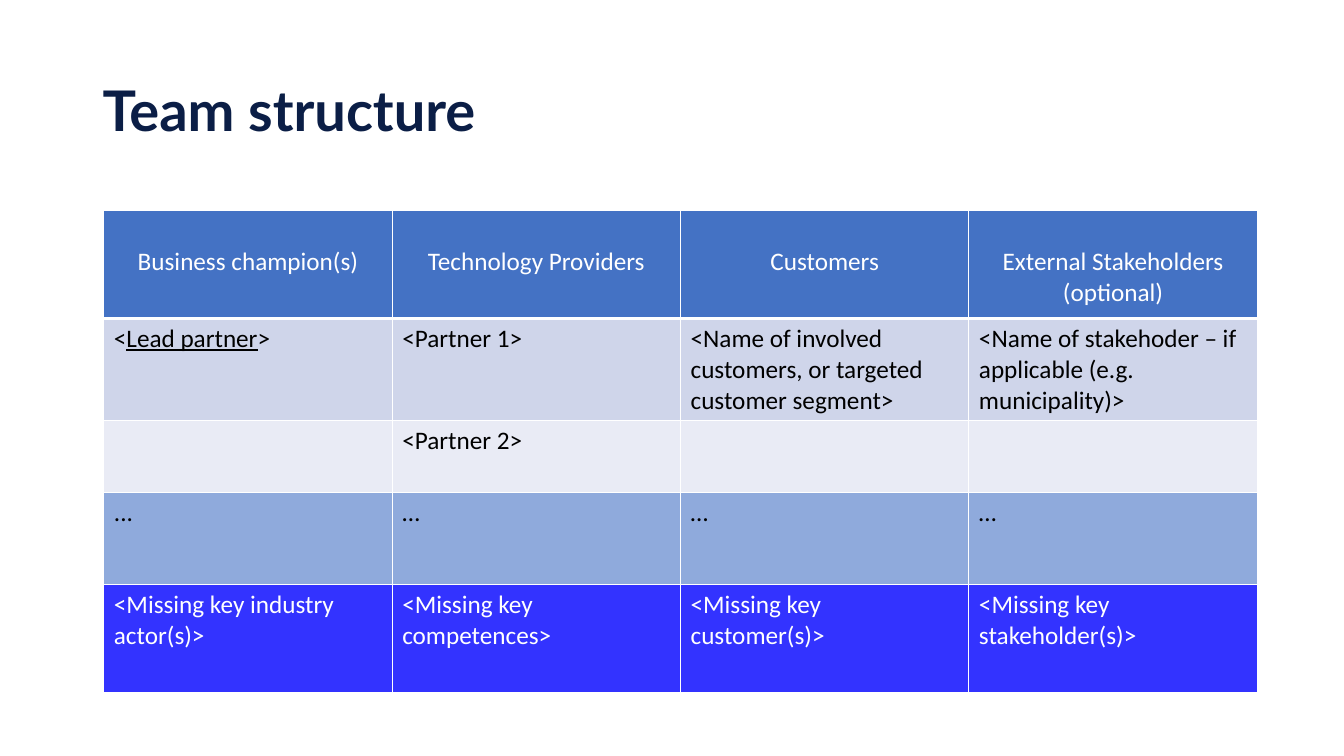
import lxml.etree
import pptx
import pptx.dml.color
import pptx.enum.text
import pptx.oxml.ns
import pptx.util

SLIDE_WIDTH, SLIDE_HEIGHT = 13.33, 7.5
WHITE, BLACK, NAVY = "FFFFFF", "000000", "0B1E46"
COLUMN_WIDTH = 2.86
HEADER_DROP = 0.36

# Each row: height, fill, text colour, one text per column
TEAM_ROWS = [
    (1.07, "4472C4", WHITE, ["Business champion(s)", "Technology Providers", "Customers",
                             "External Stakeholders (optional)"]),
    (1.01, "CFD5EA", BLACK, [["<", "Lead partner", ">"], "<Partner 1>",
                             "<Name of involved customers, or targeted customer segment>",
                             "<Name of stakehoder – if applicable (e.g. municipality)>"]),
    (0.72, "E9EBF5", BLACK, ["", "<Partner 2>", "", ""]),
    (0.91, "8FAADC", BLACK, ["...", "…", "…", "…"]),
    (1.07, "3333FF", WHITE, ["<Missing key industry actor(s)>", "<Missing key competences>",
                             "<Missing key customer(s)>", "<Missing key stakeholder(s)>"]),
]


def rgb(hex_string):
    return pptx.dml.color.RGBColor.from_string(hex_string)


def write(frame, text, size=18, font="Calibri", color=BLACK, bold=False,
          align=pptx.enum.text.PP_ALIGN.LEFT, line_spacing=1.0):
    """Fill a frame; in a list of parts every second part is underlined."""
    frame.word_wrap = True
    paragraph = frame.paragraphs[0]
    paragraph.alignment = align
    paragraph.line_spacing = line_spacing
    parts = [text] if isinstance(text, str) else text
    for index, part in enumerate(parts):
        run = paragraph.add_run()
        run.text = part
        run.font.size = pptx.util.Pt(size)
        run.font.name = font
        run.font.bold = bold
        run.font.color.rgb = rgb(color)
        if index % 2:
            run.font.underline = True


def add_borders(cell, color, bottom=1):
    properties = cell._tc.get_or_add_tcPr()
    qn = pptx.oxml.ns.qn
    for side, points in (("L", 1), ("R", 1), ("T", 1), ("B", bottom)):
        line = lxml.etree.SubElement(properties, qn(f"a:ln{side}"), w=str(pptx.util.Pt(points)))
        fill = lxml.etree.SubElement(line, qn("a:solidFill"))
        lxml.etree.SubElement(fill, qn("a:srgbClr"), val=color)


def add_title(slide, text):
    title = slide.shapes.add_textbox(*map(pptx.util.Inches, (0.92, 0.4, 9.16, 1.45)))
    title.text_frame.vertical_anchor = pptx.enum.text.MSO_ANCHOR.MIDDLE
    write(title.text_frame, text, size=40, font="Lato", color=NAVY, bold=True, line_spacing=0.9)


def add_team_table(slide, rows):
    column_count = len(rows[0][3])
    height = sum(row[0] for row in rows)
    team = slide.shapes.add_table(
        len(rows), column_count,
        *map(pptx.util.Inches, (1.03, 2.09, COLUMN_WIDTH * column_count, height))).table
    for column in team.columns:
        column.width = pptx.util.Inches(COLUMN_WIDTH)
    for row_index, (row_height, fill, color, texts) in enumerate(rows):
        is_header = row_index == 0
        team.rows[row_index].height = pptx.util.Inches(row_height)
        for column_index, text in enumerate(texts):
            cell = team.cell(row_index, column_index)
            add_borders(cell, WHITE, bottom=3 if is_header else 1)
            cell.fill.solid()
            cell.fill.fore_color.rgb = rgb(fill)
            if is_header:
                cell.margin_top = pptx.util.Inches(HEADER_DROP)
            if text:
                alignment = pptx.enum.text.PP_ALIGN
                write(cell.text_frame, text, color=color,
                      align=alignment.CENTER if is_header else alignment.LEFT)


def main():
    deck = pptx.Presentation()
    deck.slide_width = pptx.util.Inches(SLIDE_WIDTH)
    deck.slide_height = pptx.util.Inches(SLIDE_HEIGHT)
    slide = deck.slides.add_slide(deck.slide_layouts[6])
    add_title(slide, "Team structure")
    add_team_table(slide, TEAM_ROWS)
    deck.save("out.pptx")


if __name__ == "__main__":
    main()
